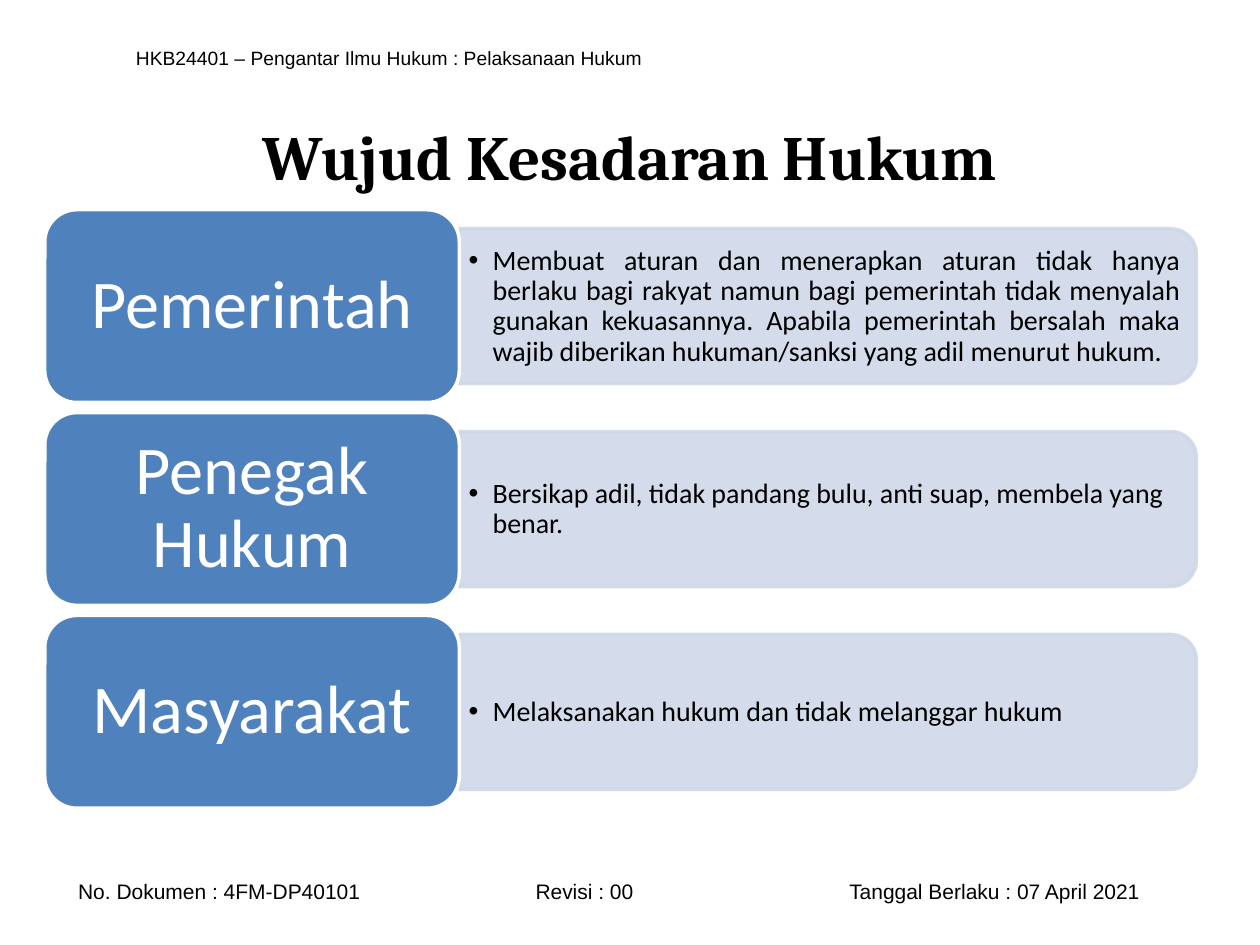
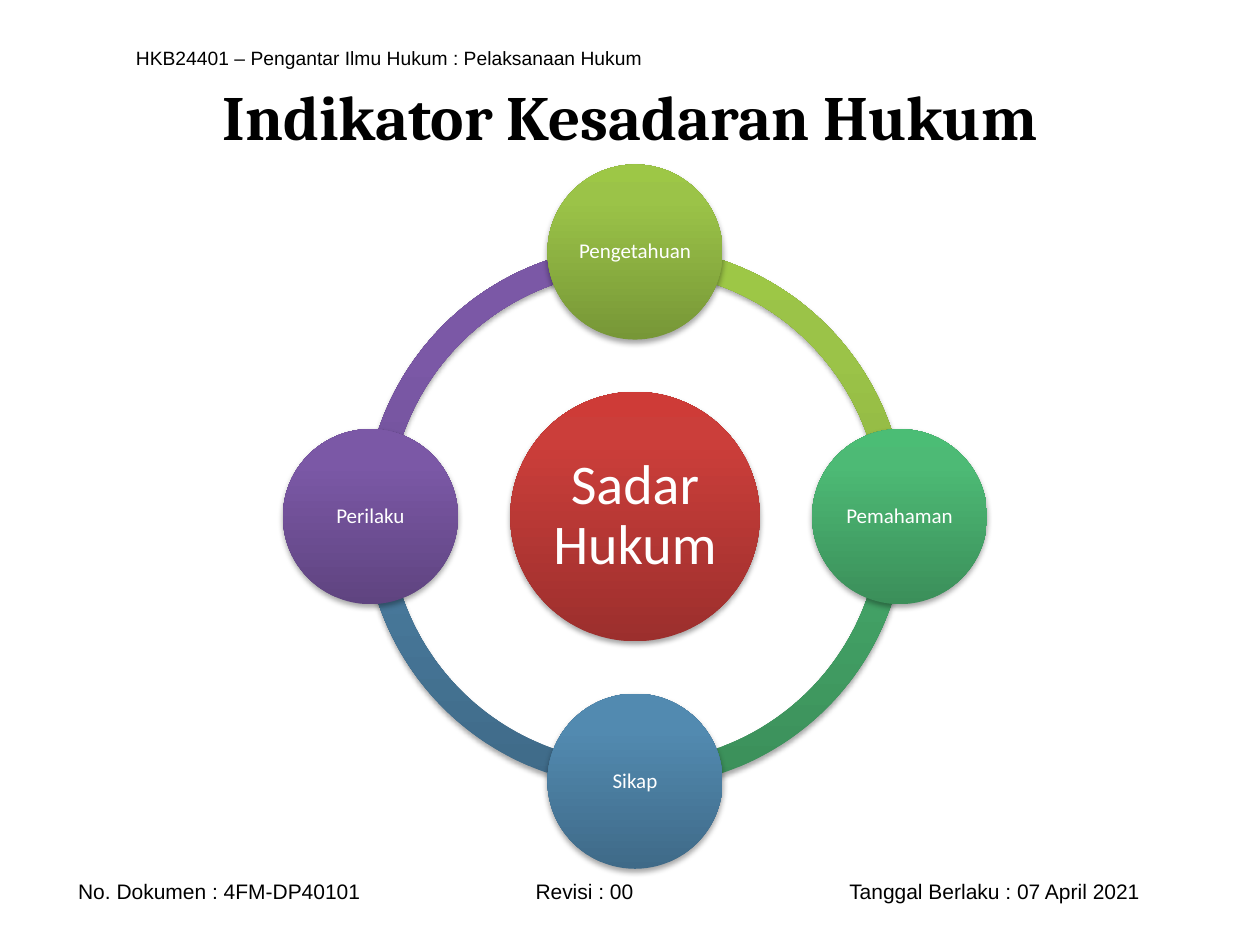
import copy
import math

import lxml.etree
import pptx
import pptx.dml.color
import pptx.enum.shapes
import pptx.enum.text
import pptx.oxml.ns
import pptx.util

Inches = pptx.util.Inches
Pt = pptx.util.Pt
qn = pptx.oxml.ns.qn
SHAPE = pptx.enum.shapes.MSO_SHAPE
ALIGN = pptx.enum.text.PP_ALIGN
MIDDLE = pptx.enum.text.MSO_ANCHOR.MIDDLE

# Shared colours and wording
BLACK, WHITE = "000000", "FFFFFF"
BLUE, PALE = "4F81BD", "D0D8E8"
RED = ("9C2F2D", "CB3E3A", "CE3B37")
HEADER = "HKB24401 – Pengantar Ilmu Hukum : Pelaksanaan Hukum"
FOOTER = ("No. Dokumen : 4FM-DP40101", "Revisi : 00",
          "Tanggal Berlaku : 07 April 2021")

ROWS = [
    ("Pemerintah",
     "Membuat aturan dan menerapkan aturan tidak hanya berlaku bagi rakyat "
     "namun bagi pemerintah tidak menyalah gunakan kekuasannya. Apabila "
     "pemerintah bersalah maka wajib diberikan hukuman/sanksi yang adil "
     "menurut hukum.", ALIGN.JUSTIFY),
    ("Penegak Hukum",
     "Bersikap adil, tidak pandang bulu, anti suap, membela yang benar.",
     ALIGN.LEFT),
    ("Masyarakat", "Melaksanakan hukum dan tidak melanggar hukum", ALIGN.LEFT),
]
# Clockwise from the top: label and gradient colours
NODES = [
    ("Pengetahuan", ("779737", "9BC348", "9DC746")),
    ("Pemahaman", ("3B8F5A", "4DBA75", "4BBD75")),
    ("Sikap", ("3F6A88", "528AB0", "518BB3")),
    ("Perilaku", ("5F4480", "7B58A6", "7C57A8")),
]


def color(code):
    return pptx.dml.color.RGBColor.from_string(code)


def child(parent, tag, **attrs):
    return lxml.etree.SubElement(parent, qn(tag), attrs)


def write(para, text, size, face, code=BLACK, bold=False):
    run = para.add_run()
    run.text = text
    run.font.size = Pt(size)
    run.font.name = face
    run.font.bold = bold
    run.font.color.rgb = color(code)


def frame(shape, pad_x, pad_y, align):
    """Set up the text area of a shape and return its first paragraph."""
    body = shape.text_frame
    body.word_wrap = True
    body.vertical_anchor = MIDDLE
    body.margin_left = body.margin_right = Inches(pad_x)
    body.margin_top = body.margin_bottom = Inches(pad_y)
    para = body.paragraphs[0]
    para.alignment = align
    return para


def text_box(slide, left, top, width, height, pad_x=0.1, pad_y=0.05,
             align=ALIGN.LEFT):
    box = slide.shapes.add_textbox(
        Inches(left), Inches(top), Inches(width), Inches(height))
    return frame(box, pad_x, pad_y, align)


def centred(slide, kind, x, y, width, height):
    """Add a preset shape around a centre point, without a shadow."""
    shape = slide.shapes.add_shape(
        kind, Inches(x - width / 2), Inches(y - height / 2),
        Inches(width), Inches(height))
    shape.shadow.inherit = False
    return shape


def paint(shape, fill, line):
    shape.fill.solid()
    shape.fill.fore_color.rgb = color(fill)
    shape.line.color.rgb = color(line)
    shape.line.width = Pt(2)


def glossy(shape, shades):
    """Three-stop upward gradient, no outline, soft shadow below."""
    shape.line.fill.background()
    shape.fill.gradient()
    shape.fill.gradient_angle = 90
    props = shape._element.spPr
    stops = props.find(".//" + qn("a:gsLst"))
    stops.append(copy.deepcopy(stops[-1]))
    for stop, place, shade in zip(shape.fill.gradient_stops, (0, 0.8, 1), shades):
        stop.position = place
        stop.color.rgb = color(shade)
    shadow = child(props.find(qn("a:effectLst")), "a:outerShdw", blurRad="40000",
                   dist="23000", dir="5400000", rotWithShape="0")
    child(child(shadow, "a:srgbClr", val=BLACK), "a:alpha", val="35000")


def label(shape, text, size, pad_x, pad_y):
    para = frame(shape, pad_x, pad_y, ALIGN.CENTER)
    para.line_spacing = 0.9
    write(para, text, size, "Calibri", WHITE)


def new_slide(deck, title, top):
    """Add a slide with the running header, footer and title."""
    slide = deck.slides.add_slide(deck.slide_layouts[5])
    write(text_box(slide, 0.98, 0.31, 8.35, 0.29), HEADER, 11, "Arial")

    foot = text_box(slide, 0.2, 6.92, 9.45, 0.3, pad_x=0.42)
    tabs = child(foot._p.get_or_add_pPr(), "a:tabLst")
    for stop in (3.63, 6.12):
        child(tabs, "a:tab", pos=str(Inches(stop)), algn="l")
    write(foot, "\t".join(FOOTER), 12, "Arial")

    head = slide.shapes.title
    head.left, head.top = Inches(0.5), Inches(top)
    head.width, head.height = Inches(9), Inches(1.25)
    write(frame(head, 0.1, 0.05, ALIGN.CENTER), title, 36, "Cambria", bold=True)
    return slide


def panel(slide, y, text, align):
    """Pale panel rounded on the right, with one bullet over it."""
    shape = centred(slide, SHAPE.ROUND_2_SAME_RECTANGLE, 6.57, y, 1.23, 5.85)
    shape.rotation = 90
    paint(shape, PALE, PALE)
    for tint in shape._element.spPr.iter(qn("a:srgbClr")):
        child(tint, "a:alpha", val="90000")

    para = text_box(slide, 3.65, y - 0.55, 5.79, 1.11, 0.07, 0.03, align)
    props = para._p.get_or_add_pPr()
    props.set("marL", str(Inches(0.19)))
    props.set("indent", str(-Inches(0.19)))
    child(props, "a:buFont", typeface="Arial")
    child(props, "a:buChar", char="•")
    para.line_spacing = 0.9
    write(para, text, 16, "Calibri")


def card(slide, y, text):
    shape = centred(slide, SHAPE.ROUNDED_RECTANGLE, 2, y, 3.29, 1.53)
    paint(shape, BLUE, WHITE)
    label(shape, text, 39, 0.16, 0.08)


def disc(slide, x, y, size, text, points, pad, shades):
    shape = centred(slide, SHAPE.OVAL, x, y, size, size)
    glossy(shape, shades)
    label(shape, text, points, pad, pad)


def arc(slide, x, y, start, shades):
    """Quarter ring running clockwise from the start angle in degrees."""
    shape = centred(slide, SHAPE.BLOCK_ARC, x, y, 4.3, 4.3)
    unit = 0.6  # adjustment value of one degree
    shape.adjustments[0] = start * unit
    shape.adjustments[1] = (start + 90) % 360 * unit
    shape.adjustments[2] = 0.046
    glossy(shape, shades)


def forms(deck):
    slide = new_slide(deck, "Wujud Kesadaran Hukum", 0.61)
    for row, (name, text, align) in enumerate(ROWS):
        y = 2.43 + 1.61 * row
        panel(slide, y, text, align)
        card(slide, y, name)


def signs(deck):
    slide = new_slide(deck, "Indikator Kesadaran Hukum", 0.29)
    x, y, reach = 5.04, 4.1, 2.1
    turns = [(270 + 90 * step) % 360 for step in range(len(NODES))]
    ring = list(zip(turns, NODES))
    for turn, (name, shades) in reversed(ring):
        arc(slide, x, y, turn, shades)
    disc(slide, x, y, 1.98, "Sadar Hukum", 32, 0.04, RED)
    for turn, (name, shades) in ring:
        angle = math.radians(turn)
        disc(slide, x + reach * math.cos(angle), y + reach * math.sin(angle),
             1.39, name, 12, 0.02, shades)


def main():
    deck = pptx.Presentation()
    deck.slide_width, deck.slide_height = Inches(10), Inches(7.5)
    forms(deck)
    signs(deck)
    deck.save("out.pptx")


if __name__ == "__main__":
    main()
